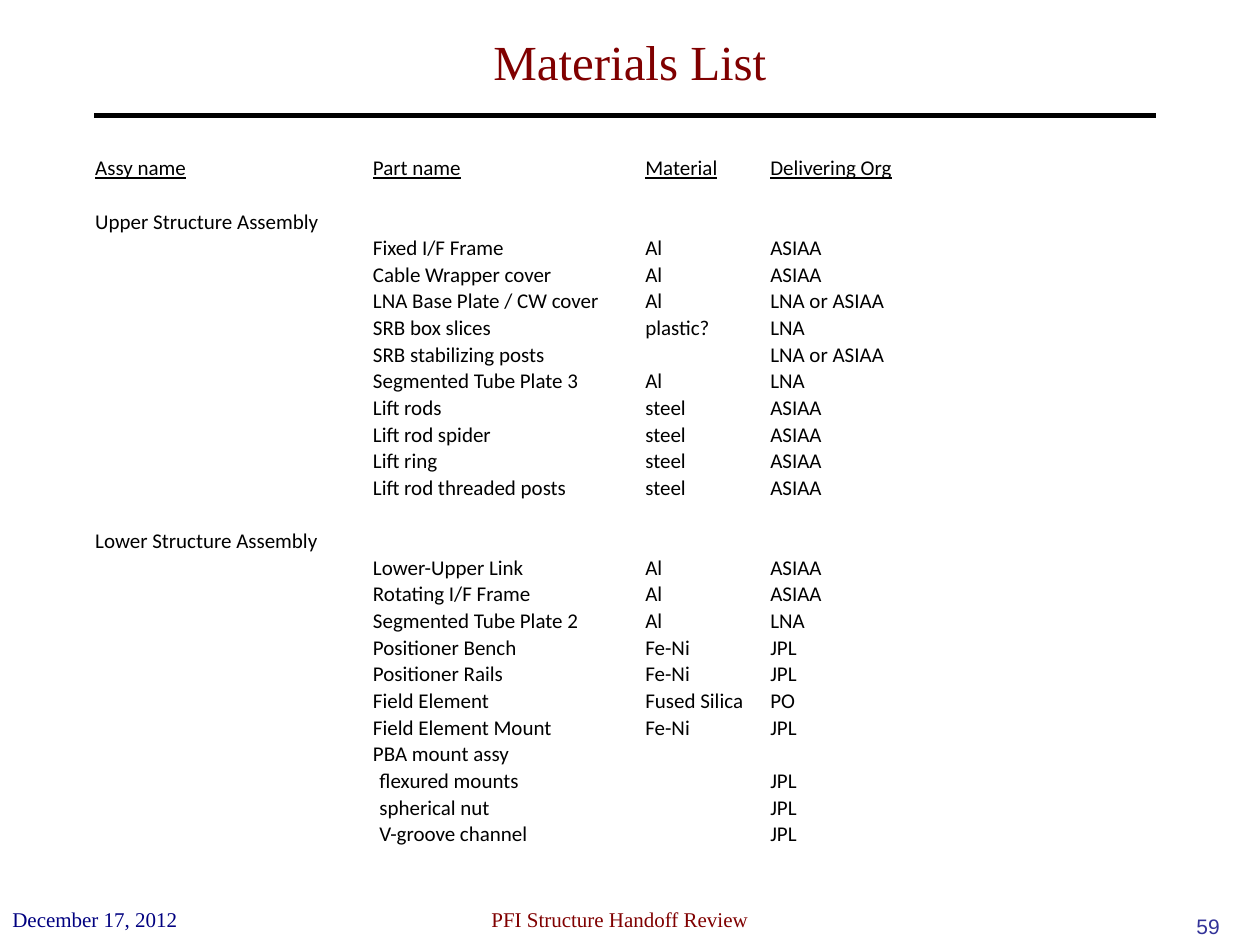
from lxml.etree import SubElement
from pptx import Presentation
from pptx.dml.color import RGBColor
from pptx.enum.shapes import MSO_CONNECTOR
from pptx.enum.text import MSO_ANCHOR, PP_ALIGN
from pptx.oxml.ns import qn
from pptx.util import Cm, Pt

MAROON, NAVY, INDIGO, BLACK = "800000", "000080", "333399", "000000"
SERIF = "Times New Roman"

HEADERS = ["Assy name", "Part name", "Material", "Delivering Org"]
ASSEMBLIES = {
    "Upper Structure Assembly": [
        ("Fixed I/F Frame", "Al", "ASIAA"),
        ("Cable Wrapper cover", "Al", "ASIAA"),
        ("LNA Base Plate / CW cover", "Al", "LNA or ASIAA"),
        ("SRB box slices", "plastic?", "LNA"),
        ("SRB stabilizing posts", "", "LNA or ASIAA"),
        ("Segmented Tube Plate 3", "Al", "LNA"),
        ("Lift rods", "steel", "ASIAA"),
        ("Lift rod spider", "steel", "ASIAA"),
        ("Lift ring", "steel", "ASIAA"),
        ("Lift rod threaded posts", "steel", "ASIAA"),
    ],
    "Lower Structure Assembly": [
        ("Lower-Upper Link", "Al", "ASIAA"),
        ("Rotating I/F Frame", "Al", "ASIAA"),
        ("Segmented Tube Plate 2", "Al", "LNA"),
        ("Positioner Bench", "Fe-Ni", "JPL"),
        ("Positioner Rails", "Fe-Ni", "JPL"),
        ("Field Element", "Fused Silica", "PO"),
        ("Field Element Mount", "Fe-Ni", "JPL"),
        ("PBA mount assy", "", ""),
        ("flexured mounts", "", "JPL"),
        ("spherical nut", "", "JPL"),
        ("V-groove channel", "", "JPL"),
    ],
}
SUBPARTS = {"flexured mounts", "spherical nut", "V-groove channel"}


def rgb(color):
    return RGBColor.from_string(color)


def write(tf, text, size=12, font=SERIF, color=BLACK, align=None, underline=None):
    p = tf.paragraphs[0]
    if align is not None:
        p.alignment = align
    if not text:  # keeps an empty line at the height of its neighbours
        SubElement(p._p, qn("a:endParaRPr"), sz=str(size * 100))
        return
    r = p.add_run()
    r.text = text
    r.font.size, r.font.name = Pt(size), font
    r.font.color.rgb = rgb(color)
    r.font.underline = underline


def add_heading(s, x, y, w, h):
    # Title
    title = s.shapes.title
    title.left, title.top, title.width, title.height = Cm(x), Cm(y), Cm(w), Cm(h)
    tf = title.text_frame
    tf.vertical_anchor = MSO_ANCHOR.MIDDLE
    write(tf, "Materials List", size=28, color=MAROON, align=PP_ALIGN.CENTER)

    # Rule below the title
    rule_y = Cm(y + h + 0.07)
    rule = s.shapes.add_connector(MSO_CONNECTOR.STRAIGHT, Cm(x), rule_y,
                                  Cm(x + w - 0.2), rule_y)
    rule.line.color.rgb = rgb(BLACK)
    rule.line.width = Pt(3)
    SubElement(rule._element.spPr, qn("a:effectLst"))


def material_rows():
    blank = ("",) * len(HEADERS)
    rows = [HEADERS]
    for assembly, parts in ASSEMBLIES.items():
        rows += [blank, (assembly, "", "", "")]
        rows += [("", *part) for part in parts]
    return rows + [blank]


def add_materials(s, x, y, widths, row_h):
    rows = material_rows()
    frame = s.shapes.add_table(len(rows), len(widths), Cm(x), Cm(y),
                               Cm(sum(widths)), Cm(row_h * len(rows)))
    table = frame.table
    table.first_row = table.horz_banding = False
    for column, width in zip(table.columns, widths):
        column.width = Cm(width)
    for i, row in enumerate(rows):
        table.rows[i].height = Cm(row_h)
        for j, text in enumerate(row):
            cell = table.cell(i, j)
            cell.fill.background()
            cell.vertical_anchor = MSO_ANCHOR.BOTTOM
            cell.margin_left = Cm(0.15 if text in SUBPARTS else 0.02)
            cell.margin_right = cell.margin_top = Cm(0.02)
            cell.margin_bottom = 0
            write(cell.text_frame, text, font="Calibri",
                  underline=True if i == 0 else None)


def add_footer(s, x, y, w, h):
    # Offset and size of each box, then its text and format
    items = [
        (0, 0, 5.92, "December 17, 2012", dict(color=NAVY)),
        (8.05, 0, 8.89, "PFI Structure Handoff Review",
         dict(color=MAROON, align=PP_ALIGN.CENTER)),
        (w - 5.28, 0.14, 5.28, "59",
         dict(font="Arial", color=INDIGO, align=PP_ALIGN.RIGHT)),
    ]
    for dx, dy, width, text, style in items:
        box = s.shapes.add_textbox(Cm(x + dx), Cm(y + dy), Cm(width), Cm(h))
        box.text_frame.word_wrap = True
        write(box.text_frame, text, **style)


def main():
    prs = Presentation()
    prs.slide_width, prs.slide_height = Cm(25.4), Cm(19.05)
    s = prs.slides.add_slide(prs.slide_layouts[5])
    add_heading(s, 1.9, 0.2, 21.6, 2.06)
    add_materials(s, 1.9, 3.12, [5.6, 5.49, 2.52, 3.1], 0.53)
    add_footer(s, 0, 18.16, 24.84, 0.89)
    prs.save("out.pptx")


if __name__ == "__main__":
    main()
